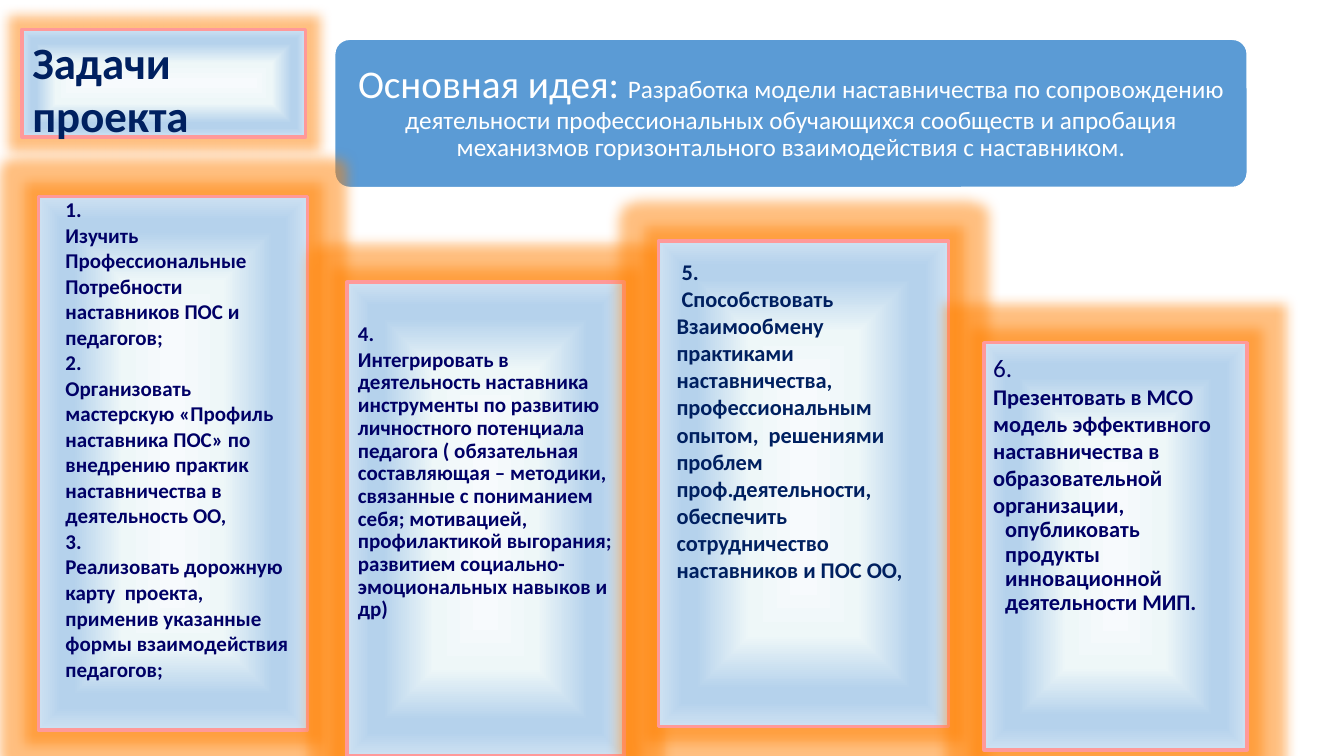
from dataclasses import dataclass

from lxml.etree import SubElement
from pptx import Presentation
from pptx.dml.color import RGBColor
from pptx.enum.shapes import MSO_SHAPE as Geo
from pptx.enum.text import MSO_ANCHOR as Anchor, MSO_AUTO_SIZE as Auto, PP_ALIGN as Align
from pptx.oxml.ns import qn
from pptx.util import Inches, Pt


@dataclass(frozen=True)
class Theme:
    font: str = "Calibri"
    white: str = "FFFFFF"
    blue: str = "5B9BD5"
    navy: str = "002060"
    ink: str = "000066"
    pink: str = "FF9999"
    glow: str = "FF8000"
    stops: tuple = ((0, "F7FAFD"), (37, "EEF7F8"), (74, "B5D2EC"),
                    (83, "B5D2EC"), (100, "CEE1F2"))
    title: int = 32
    lead: int = 28
    idea: int = 18
    mark: int = 18
    task: int = 16
    small: int = 15


THEME = Theme()

IDEA = ("Основная идея: ",
        "Разработка модели наставничества по сопровождению деятельности "
        "профессиональных обучающихся сообществ и апробация механизмов "
        "горизонтального взаимодействия с наставником.")

STUDY = ["1.", "Изучить", "Профессиональные", "Потребности",
         "наставников ПОС и", "педагогов;", "2.", "Организовать",
         "мастерскую «Профиль", "наставника ПОС» по", "внедрению практик",
         "наставничества в", "деятельность ОО,", "3.",
         "Реализовать дорожную", "карту  проекта,", "применив указанные",
         "формы взаимодействия", "педагогов;"]

TOOLS = ["4.",
         "Интегрировать в деятельность наставника инструменты по развитию "
         "личностного потенциала педагога ( обязательная составляющая – "
         "методики, связанные с пониманием себя; мотивацией, профилактикой "
         "выгорания; развитием социально-эмоциональных навыков и др)"]

SHARE = [" 5.", " Способствовать", "Взаимообмену", "практиками",
         "наставничества,", "профессиональным", "опытом,  решениями",
         "проблем", "проф.деятельности,", "обеспечить", "сотрудничество",
         "наставников и ПОС ОО,"]

SHOW = ["6.", "Презентовать в МСО", "модель эффективного",
        "наставничества в", "образовательной",
        "организации, опубликовать продукты инновационной деятельности МИП."]


def color(code):
    return RGBColor.from_string(code)


def style(run, size, tint, bold=False):
    font = run.font
    font.name, font.size, font.bold = THEME.font, Pt(size), bold
    font.color.rgb = color(tint)


def inset(frame, left, top, right, bottom):
    frame.margin_left, frame.margin_top = Inches(left), Inches(top)
    frame.margin_right, frame.margin_bottom = Inches(right), Inches(bottom)


def node(parent, tag, **attrs):
    return SubElement(parent, qn(tag), attrs)


def tint_node(parent, code):
    return node(parent, "a:srgbClr", val=code)


def add_grad(shape):
    shape.fill.background()
    props = shape.element.spPr
    blank = props.find(qn("a:noFill"))
    grad = node(props, "a:gradFill", rotWithShape="1")
    stops = node(grad, "a:gsLst")
    for pos, code in THEME.stops:
        tint_node(node(stops, "a:gs", pos=str(pos * 1000)), code)
    shade = node(grad, "a:path", path="shape")
    node(shade, "a:fillToRect", l="50000", t="50000", r="50000", b="50000")
    props.replace(blank, grad)


def add_glow(shape):
    shape.shadow.inherit = False
    effects = shape.element.spPr.find(qn("a:effectLst"))
    glow = node(effects, "a:glow", rad=str(Pt(18)))
    node(tint_node(glow, THEME.glow), "a:alpha", val="50000")


def frost(shape):
    add_grad(shape)
    shape.line.color.rgb = color(THEME.pink)
    shape.line.width = Pt(2.5)
    add_glow(shape)


def set_title(slide):
    title = slide.shapes.title
    title.left, title.top = Inches(0.22), Inches(0.29)
    title.width, title.height = Inches(2.81), Inches(1.07)
    frost(title)
    frame = title.text_frame
    frame.text = "Задачи проекта"
    frame.word_wrap, frame.auto_size = True, Auto.NONE
    frame.vertical_anchor = Anchor.TOP
    inset(frame, 0.1, 0.05, 0.1, 0.05)
    para = frame.paragraphs[0]
    para.alignment = Align.LEFT
    style(para.runs[0], THEME.title, THEME.navy, True)


def add_idea(slide):
    box = slide.shapes.add_shape(Geo.ROUNDED_RECTANGLE, Inches(3.32),
                                 Inches(0.39), Inches(9.05), Inches(1.47))
    box.adjustments[0] = 0.1
    box.shadow.inherit = False
    box.fill.solid()
    box.fill.fore_color.rgb = color(THEME.blue)
    box.line.color.rgb = color(THEME.white)
    box.line.width = Pt(1)
    frame = box.text_frame
    frame.word_wrap, frame.vertical_anchor = True, Anchor.MIDDLE
    inset(frame, 0.06, 0.04, 0.06, 0.04)
    para = frame.paragraphs[0]
    para.alignment, para.line_spacing = Align.CENTER, 0.9
    for text, size in zip(IDEA, (THEME.lead, THEME.idea)):
        run = para.add_run()
        run.text = text
        style(run, size, THEME.white)


def add_panel(slide, area):
    frost(slide.shapes.add_shape(Geo.RECTANGLE, *map(Inches, area)))


def add_tasks(slide, area, lines, size, tint, top=0.09, hang=-0.12,
              align=Align.LEFT):
    frame = slide.shapes.add_textbox(*map(Inches, area)).text_frame
    frame.word_wrap = True
    inset(frame, 0.09, top, 0.12, 0.13)
    frame.text = "\n".join(lines)
    for para in frame.paragraphs:
        para.alignment, para.line_spacing = align, 0.9
        para.space_after = Pt(round(size * 0.13, 1))
        props = para._p.get_or_add_pPr()
        props.set("marL", str(Inches(0.12)))
        props.set("indent", str(Inches(hang)))
        style(para.runs[0], size, tint, True)
    return frame


def main():
    deck = Presentation()
    deck.slide_width, deck.slide_height = Inches(13.33), Inches(7.5)
    slide = deck.slides.add_slide(deck.slide_layouts[5])
    set_title(slide)
    add_idea(slide)

    add_panel(slide, (0.38, 1.95, 2.67, 5.29))
    add_tasks(slide, (0.56, 1.89, 2.5, 5.51), STUDY, THEME.small, THEME.ink,
              align=Align.JUSTIFY)
    add_panel(slide, (3.44, 2.8, 2.75, 4.7))
    add_tasks(slide, (3.34, 2.84, 2.86, 4.51), TOOLS, THEME.small, THEME.ink,
              top=0.37, hang=0)
    add_panel(slide, (6.53, 2.39, 2.88, 4.82))
    add_tasks(slide, (6.62, 2.5, 2.81, 4.82), SHARE, THEME.task, THEME.navy)
    add_panel(slide, (9.76, 3.4, 2.61, 4.04))
    show = add_tasks(slide, (9.76, 3.44, 2.61, 3.91), SHOW, THEME.task,
                     THEME.ink)
    style(show.paragraphs[0].runs[0], THEME.mark, THEME.ink)

    deck.save("out.pptx")


if __name__ == "__main__":
    main()
